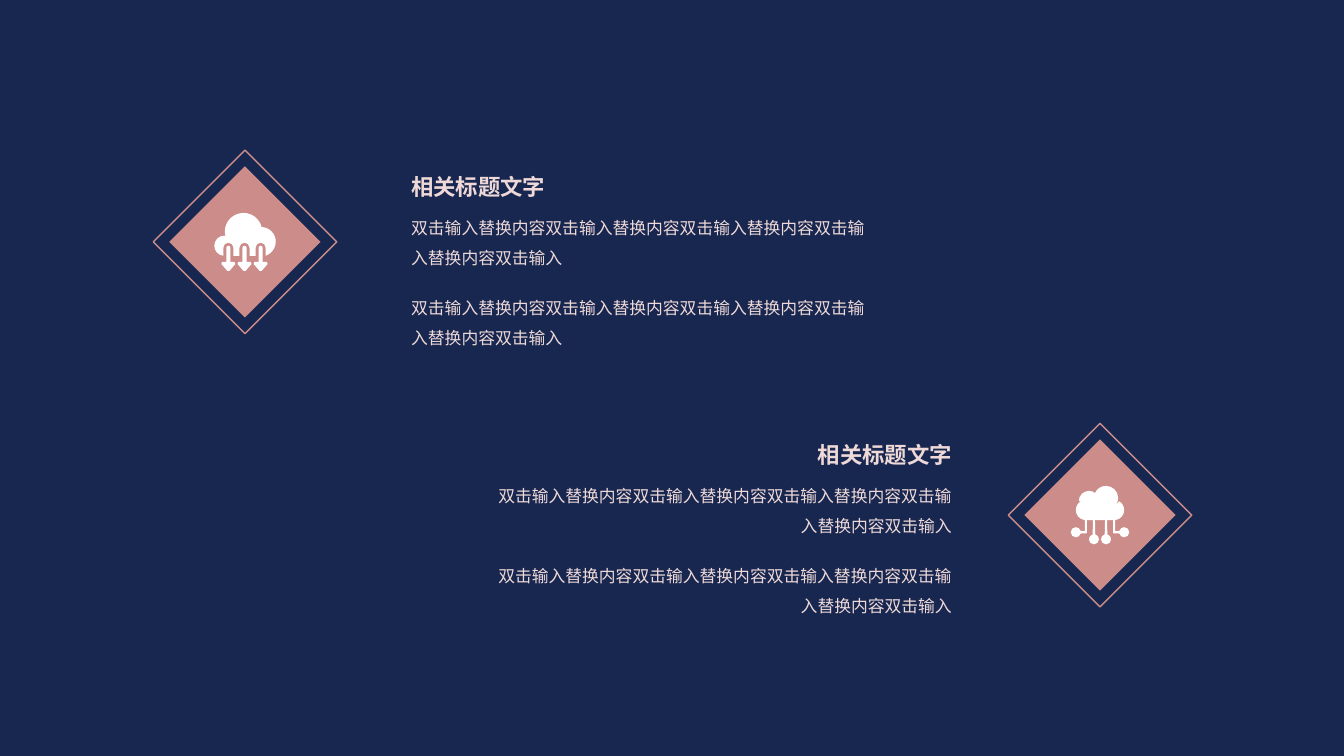
from math import cos, radians, sin, tan

from lxml import etree
from pptx import Presentation
from pptx.dml.color import RGBColor
from pptx.enum.shapes import MSO_SHAPE
from pptx.enum.text import MSO_AUTO_SIZE, PP_ALIGN
from pptx.oxml.ns import qn
from pptx.util import Inches, Pt

DIAMOND = MSO_SHAPE.DIAMOND
GROW = MSO_AUTO_SIZE.SHAPE_TO_FIT_TEXT
LEFT, RIGHT = PP_ALIGN.LEFT, PP_ALIGN.RIGHT
NAVY = RGBColor(0x18, 0x27, 0x50)
ROSE = RGBColor(0xCC, 0x8D, 0x8A)
BLUSH = RGBColor(0xEE, 0xD9, 0xD8)
WHITE = RGBColor(0xFF, 0xFF, 0xFF)
FONT = "Noto Sans CJK SC"
HEADING = "相关标题文字"
BODY = "双击输入替换内容" * 4 + "双击输入"
BADGE_SIZE = 1.82
DIAMOND_SIZE = 1.5
UNITS_PER_INCH = 1000


def arc(x, y, radius, start, end):
    """Return a line to an arc's start, then a Bezier triple for each quadrant it crosses."""
    low, high = min(start, end), max(start, end)
    stops = [low, *(a for a in range(0, 720, 90) if low < a < high), high]
    if start > end:
        stops.reverse()
    steps = [[(x + radius * cos(radians(start)), y + radius * sin(radians(start)))]]
    for first, last in zip(stops, stops[1:]):
        a, b = radians(first), radians(last)
        pull = 4 / 3 * tan((b - a) / 4)
        steps.append([
            (x + radius * (cos(a) - pull * sin(a)), y + radius * (sin(a) + pull * cos(a))),
            (x + radius * (cos(b) + pull * sin(b)), y + radius * (sin(b) - pull * cos(b))),
            (x + radius * cos(b), y + radius * sin(b))])
    return steps


def lines(*points):
    """Return straight steps through the points."""
    return [[point] for point in points]


def upload_cloud():
    """Return the outlines of a cloud with three arrows pointing down."""
    cloud = (arc(0.1, 0.33, 0.1, 95, 270) + arc(0.29, 0.19, 0.185, 165, 345)
             + arc(0.465, 0.29, 0.145, 270, 420))
    arrows = []
    for x in (0.46, 0.30, 0.14):
        cloud += (lines((x + 0.05, 0.43)) + arc(x, 0.35, 0.05, 360, 180)
                  + lines((x - 0.05, 0.43)))
        arrows.append(arc(x, 0.35, 0.02, 180, 360) + lines(
            (x + 0.02, 0.49), (x + 0.06, 0.49), (x + 0.07, 0.51), (x + 0.01, 0.58),
            (x - 0.01, 0.58), (x - 0.07, 0.51), (x - 0.06, 0.49), (x - 0.02, 0.49)))
    return [cloud, *arrows]


def network_cloud():
    """Return the outline of a cloud wired to four round nodes."""
    cloud = (arc(0.15, 0.24, 0.1, 100, 240) + arc(0.18, 0.15, 0.1, 180, 310)
             + arc(0.35, 0.12, 0.12, 205, 395) + arc(0.43, 0.24, 0.1, 300, 440)
             + lines((0.44, 0.34), (0.44, 0.45)) + arc(0.53, 0.46, 0.05, 195, 525)
             + lines((0.42, 0.47), (0.42, 0.34)))
    for x in (0.35, 0.23):
        cloud += (lines((x + 0.01, 0.34)) + arc(x, 0.53, 0.05, 285, 615)
                  + lines((x - 0.01, 0.34)))
    cloud += (lines((0.16, 0.34), (0.16, 0.47)) + arc(0.05, 0.46, 0.05, 15, 345)
              + lines((0.14, 0.45), (0.14, 0.34)))
    return [cloud]


def add_diamond(group, left, top, size, fill=None, line=None):
    """Add a diamond with the given fill or outline."""
    diamond = group.shapes.add_shape(
        DIAMOND, Inches(left), Inches(top), Inches(size), Inches(size))
    diamond.shadow.inherit = False
    if fill is None:
        diamond.fill.background()
    else:
        diamond.fill.solid()
        diamond.fill.fore_color.rgb = fill
    if line is None:
        diamond.line.fill.background()
    else:
        diamond.line.color.rgb = line
        diamond.line.width = Pt(1)


def bend(icon, steps):
    """Merge the line segments of each three-point step into one Bezier curve."""
    segments = iter(list(icon._element.iter(qn("a:lnTo"))))
    for step in steps:
        parts = [next(segments) for _ in step]
        if len(parts) == 3:
            parts[0].tag = qn("a:cubicBezTo")
            for part in parts[1:]:
                parts[0].append(part[0])
                part.getparent().remove(part)


def add_icon(group, left, top, outlines):
    """Draw white outlines as one shape centred in a badge at left and top."""
    contours = [[(round(x * UNITS_PER_INCH), round(y * UNITS_PER_INCH))
                 for step in outline for x, y in step] for outline in outlines]
    builder = group.shapes.build_freeform(*contours[0][0], scale=Inches(1) / UNITS_PER_INCH)
    for contour in contours:
        if contour is not contours[0]:
            builder.move_to(*contour[0])
        builder.add_line_segments(contour[1:] + contour[:1], close=False)
    icon = builder.convert_to_shape()
    bend(icon, [step for outline in outlines for step in outline[1:] + outline[:1]])
    icon.left = Inches(left) + (Inches(BADGE_SIZE) - icon.width) // 2
    icon.top = Inches(top) + (Inches(BADGE_SIZE) - icon.height) // 2
    icon.shadow.inherit = False
    icon.fill.solid()
    icon.fill.fore_color.rgb = WHITE
    icon.line.fill.background()


def add_badges(page, badges):
    """Add a group of framed diamonds, each with an icon in its middle."""
    group = page.shapes.add_group_shape()
    inset = (BADGE_SIZE - DIAMOND_SIZE) / 2
    for left, top, outlines in badges:
        add_diamond(group, left + inset, top + inset, DIAMOND_SIZE, fill=ROSE)
        add_diamond(group, left, top, BADGE_SIZE, line=ROSE)
        add_icon(group, left, top, outlines)


def add_text(group, text, left, top, width, height, size=12, bold=False,
             align=LEFT, spacing=1.5):
    """Add a wrapped text box with one formatted paragraph."""
    box = group.shapes.add_textbox(Inches(left), Inches(top), Inches(width), Inches(height))
    box.text_frame.word_wrap = True
    box.text_frame.auto_size = GROW
    para = box.text_frame.paragraphs[0]
    para.alignment = align
    para.line_spacing = spacing
    span = para.add_run()
    span.text = text
    span.font.name = FONT
    span.font.size = Pt(size)
    span.font.bold = bold
    span.font.color.rgb = BLUSH
    etree.SubElement(span.font._element, qn("a:ea"), typeface=FONT)


def add_text_block(page, left, top, width, align):
    """Add a group of a heading and two body texts, aligned to one side."""
    group = page.shapes.add_group_shape()
    heading_width = 4.6
    heading_left = left + width - heading_width if align == RIGHT else left
    add_text(group, HEADING, heading_left, top, heading_width, 0.42,
             size=16, bold=True, align=align, spacing=1.3)
    for offset in (0.42, 1.21):
        add_text(group, BODY, left, top + offset, width, 0.68, align=align)


def main():
    """Build the deck with its two badge and text rows."""
    deck = Presentation()
    deck.slide_width, deck.slide_height = Inches(13.33), Inches(7.5)
    page = deck.slides.add_slide(deck.slide_layouts[6])
    page.background.fill.solid()
    page.background.fill.fore_color.rgb = NAVY
    add_badges(page, [(1.52, 1.49, upload_cloud()), (10, 4.2, network_cloud())])
    add_text_block(page, 3.98, 1.59, 4.84, LEFT)
    add_text_block(page, 4.7, 4.25, 4.84, RIGHT)
    deck.save("out.pptx")


if __name__ == "__main__":
    main()
